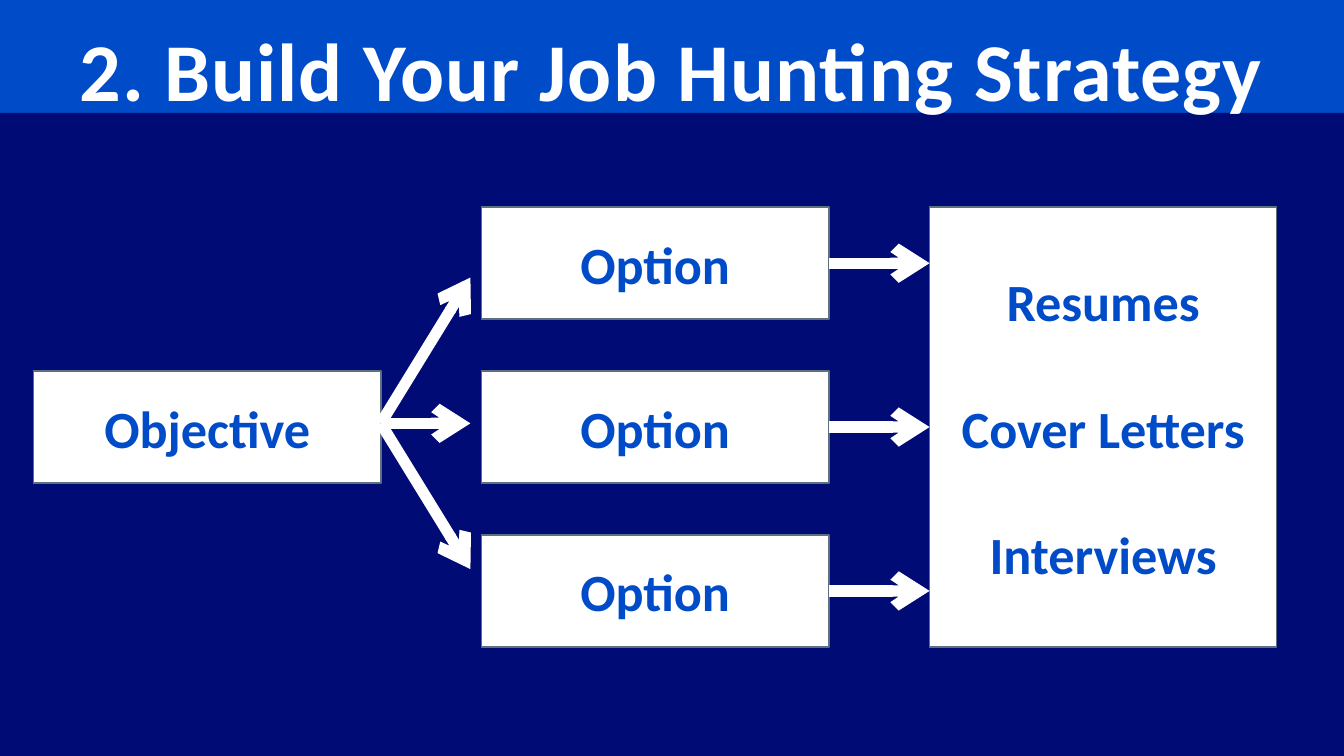
"""Build the job hunting strategy slide: one objective, three options, three outputs."""
from lxml import etree
from pptx import Presentation
from pptx.dml.color import RGBColor
from pptx.enum.shapes import MSO_CONNECTOR, MSO_SHAPE
from pptx.enum.text import MSO_ANCHOR, MSO_AUTO_SIZE, PP_ALIGN
from pptx.oxml.ns import qn
from pptx.util import Pt

RECTANGLE = MSO_SHAPE.RECTANGLE
STRAIGHT = MSO_CONNECTOR.STRAIGHT
CENTER = PP_ALIGN.CENTER
MIDDLE, TOP = MSO_ANCHOR.MIDDLE, MSO_ANCHOR.TOP
NO_AUTOFIT = MSO_AUTO_SIZE.NONE

TITLE = "2. Build Your Job Hunting Strategy"
OBJECTIVE = "Objective"
OPTIONS = ["Option", "Option", "Option"]
OUTPUTS = ["Resumes", "Cover Letters", "Interviews"]

COLORS = {"blue": "004CC8", "navy": "000B76", "white": "FFFFFF", "border": "5D7080"}
FONT = "Calibri"
SLIDE_WIDTH, SLIDE_HEIGHT, BAND_HEIGHT = 720, 405, 60.5
COLUMN_LEFTS = [18 + 240 * column for column in range(3)]
ROW_TOPS = [111 + 87.8 * row for row in range(3)]
BOX_WIDTH, BOX_HEIGHT = 186, 60
OUTPUTS_HEIGHT = ROW_TOPS[-1] + BOX_HEIGHT - ROW_TOPS[0]
FAN_Y, FAN_STEP, FAN_GAP = 226.8, 78.1, 6


def color(name):
    return RGBColor.from_string(COLORS[name])


def style_paragraph(paragraph, size, color_name):
    paragraph.alignment = CENTER
    font = paragraph.font
    font.name, font.size, font.bold = FONT, Pt(size), True
    font.color.rgb = color(color_name)


def add_rectangle(slide, left, top, width, height, fill):
    shape = slide.shapes.add_shape(RECTANGLE, Pt(left), Pt(top), Pt(width), Pt(height))
    shape.shadow.inherit = False
    shape.fill.solid()
    shape.fill.fore_color.rgb = color(fill)
    shape.line.fill.background()
    return shape


def add_box(slide, left, top, height, lines):
    box = add_rectangle(slide, left, top, BOX_WIDTH, height, "white")
    box.line.color.rgb = color("border")
    box.line.width = Pt(0.85)
    frame = box.text_frame
    frame.word_wrap = True
    frame.vertical_anchor = MIDDLE
    frame.text = "\n".join(lines)
    for index, paragraph in enumerate(frame.paragraphs):
        style_paragraph(paragraph, 28, "blue")
        if index:
            paragraph.space_before = Pt(34)


def add_arrow(shapes, start, end):
    arrow = shapes.add_connector(STRAIGHT, *(Pt(value) for value in (*start, *end)))
    arrow.line.color.rgb = color("white")
    arrow.line.width = Pt(6)
    etree.SubElement(arrow.line._get_or_add_ln(), qn("a:tailEnd"), type="arrow")
    etree.SubElement(arrow.element.spPr, qn("a:effectLst"))


def add_title(slide):
    title = slide.shapes.title
    title.element.getparent().append(title.element)
    title.left, title.top, title.width, title.height = Pt(0), Pt(4.3), Pt(SLIDE_WIDTH), Pt(48)
    frame = title.text_frame
    frame.text = TITLE
    frame.auto_size = NO_AUTOFIT
    frame.vertical_anchor = TOP
    frame.margin_top = Pt(6)
    paragraph = frame.paragraphs[0]
    style_paragraph(paragraph, 44, "white")
    paragraph.runs[0].font._element.set("spc", "50")


def main():
    presentation = Presentation()
    presentation.slide_width, presentation.slide_height = Pt(SLIDE_WIDTH), Pt(SLIDE_HEIGHT)
    slide = presentation.slides.add_slide(presentation.slide_layouts[5])
    add_rectangle(slide, 0, 0, SLIDE_WIDTH, BAND_HEIGHT, "blue")
    add_rectangle(slide, 0, BAND_HEIGHT, SLIDE_WIDTH, SLIDE_HEIGHT - BAND_HEIGHT, "navy")
    add_title(slide)

    objective_left, option_left, outputs_left = COLUMN_LEFTS
    add_box(slide, objective_left, ROW_TOPS[1], BOX_HEIGHT, [OBJECTIVE])
    for top, option in zip(ROW_TOPS, OPTIONS):
        add_box(slide, option_left, top, BOX_HEIGHT, [option])
    add_box(slide, outputs_left, ROW_TOPS[0], OUTPUTS_HEIGHT, OUTPUTS)

    fan = slide.shapes.add_group_shape()
    for row, top in enumerate(ROW_TOPS):
        fan_end = (option_left - FAN_GAP, FAN_Y + (row - 1) * FAN_STEP)
        add_arrow(fan.shapes, (objective_left + BOX_WIDTH, FAN_Y), fan_end)
        middle = top + BOX_HEIGHT / 2
        add_arrow(slide.shapes, (option_left + BOX_WIDTH, middle), (outputs_left, middle))
    presentation.save("out.pptx")


if __name__ == "__main__":
    main()
